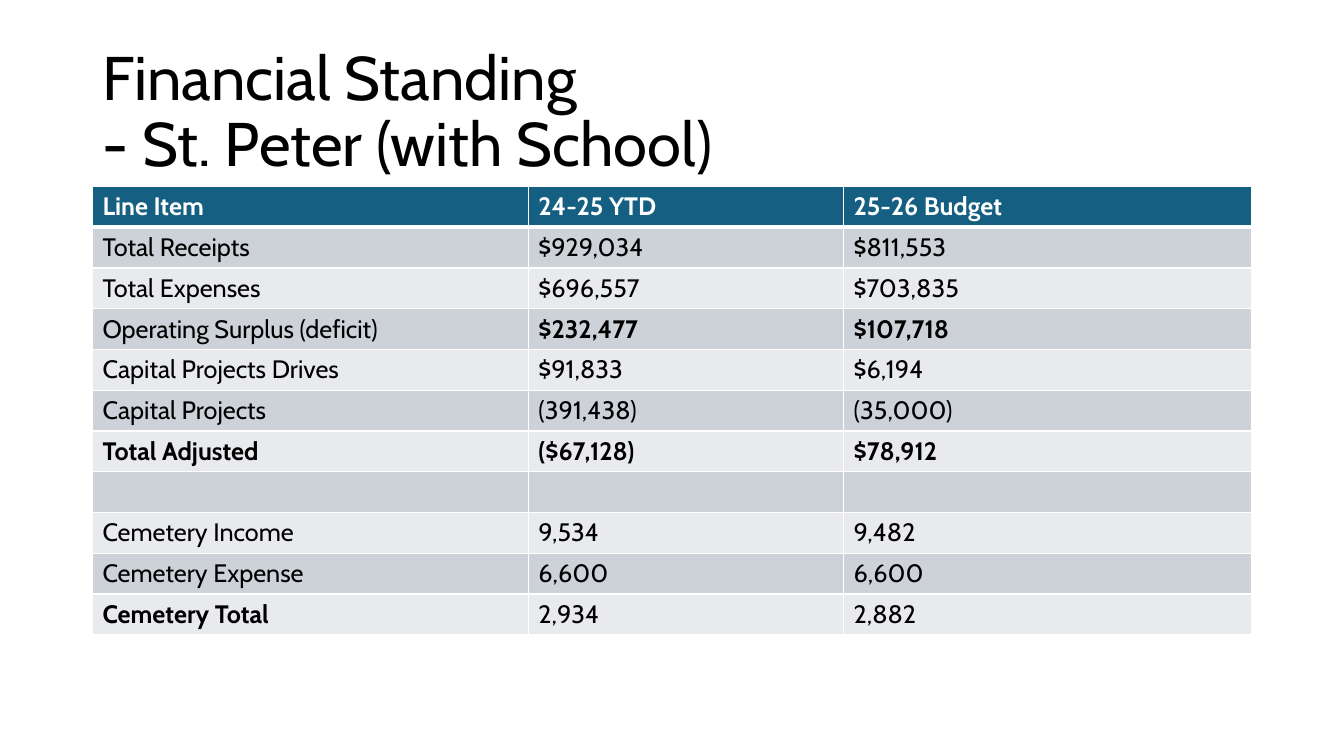
"""Build the financial standing slide for St. Peter."""
from dataclasses import dataclass

from lxml import etree
from pptx import Presentation
from pptx import util as u
from pptx.dml.color import RGBColor
from pptx.enum import text
from pptx.oxml import ns


@dataclass(frozen=True)
class Theme:
    """Colours, font and type sizes of the slide."""
    font: str = "Cabin"
    title_size: int = 44
    table_size: int = 18
    ink: str = "000000"
    paper: str = "FFFFFF"
    header: str = "156082"
    bands: tuple = ("CCD2D8", "E8EAED")
    rule: float = 1
    header_rule: float = 3


THEME = Theme()
WIDTH, HEIGHT = u.Inches(13.333), u.Inches(7.5)
TITLE_AREA = (6.88, 5.33, 86.25, 19.33)
TABLE_AREA = (6.88, 24.67, 86.25, 59.33)
COLUMN_SHARES = (37.6, 27.2, 35.2)
TITLE = "Financial Standing\v- St. Peter (with School)"
LEDGER = (
    ("Line Item", "24-25 YTD", "25-26 Budget"),
    ("Total Receipts", "$929,034", "$811,553"),
    ("Total Expenses", "$696,557", "$703,835"),
    ("Operating Surplus (deficit)", "$232,477", "$107,718"),
    ("Capital Projects Drives", "$91,833", "$6,194"),
    ("Capital Projects", "(391,438)", "(35,000)"),
    ("Total Adjusted", "($67,128)", "$78,912"),
    ("", "", ""),
    ("Cemetery Income", "9,534", "9,482"),
    ("Cemetery Expense", "6,600", "6,600"),
    ("Cemetery Total", "2,934", "2,882"),
)
BOLD_COLUMNS = {
    "Line Item": (0, 1, 2),
    "Operating Surplus (deficit)": (1, 2),
    "Total Adjusted": (0, 1, 2),
    "Cemetery Total": (0,),
}


def place(area):
    """Turn percentages of the slide into left, top, width and height."""
    return [int(share * side / 100)
            for share, side in zip(area, (WIDTH, HEIGHT, WIDTH, HEIGHT))]


def write(frame, words, *, size, color, bold=False, spacing=None):
    """Fill a text frame with one formatted paragraph."""
    para = frame.paragraphs[0]
    para.text = words
    para.line_spacing = spacing
    for span in para.runs:
        span.font.name = THEME.font
        span.font.size = u.Pt(size)
        span.font.bold = bold
        span.font.color.rgb = RGBColor.from_string(color)


def add_title(page, words):
    """Add the slide title."""
    frame = page.shapes.add_textbox(*place(TITLE_AREA)).text_frame
    frame.word_wrap = True
    frame.vertical_anchor = text.MSO_ANCHOR.MIDDLE
    write(frame, words, size=THEME.title_size, color=THEME.ink, spacing=0.9)


def set_borders(cell, widths):
    """Draw the cell borders, given widths by side in points."""
    properties = cell._tc.get_or_add_tcPr()
    for index, side in enumerate("LRTB"):
        line = etree.Element(ns.qn(f"a:ln{side}"), w=str(u.Pt(widths[side])))
        fill = etree.SubElement(line, ns.qn("a:solidFill"))
        etree.SubElement(fill, ns.qn("a:srgbClr"), val=THEME.paper)
        properties.insert(index, line)


def format_cell(cell, words, *, fill, color, bold, widths):
    """Set the fill, borders and text of one cell."""
    cell.fill.solid()
    cell.fill.fore_color.rgb = RGBColor.from_string(fill)
    set_borders(cell, widths)
    write(cell.text_frame, words, size=THEME.table_size, color=color, bold=bold)


def add_ledger(page, rows):
    """Add the banded table with its header row."""
    left, top, width, height = place(TABLE_AREA)
    table = page.shapes.add_table(
        len(rows), len(COLUMN_SHARES), left, top, width, height).table
    for column, share in zip(table.columns, COLUMN_SHARES):
        column.width = int(width * share / 100)
    for row, entries in enumerate(rows):
        header = row == 0
        widths = dict.fromkeys("LRTB", THEME.rule)
        if row < 2:
            widths["B" if header else "T"] = THEME.header_rule
        for column, words in enumerate(entries):
            format_cell(
                table.cell(row, column), words,
                fill=THEME.header if header else THEME.bands[(row - 1) % 2],
                color=THEME.paper if header else THEME.ink,
                bold=column in BOLD_COLUMNS.get(entries[0], ()),
                widths=widths)


def main():
    """Create the deck and save it."""
    deck = Presentation()
    deck.slide_width, deck.slide_height = WIDTH, HEIGHT
    page = deck.slides.add_slide(deck.slide_layouts[6])
    add_title(page, TITLE)
    add_ledger(page, LEDGER)
    deck.save("out.pptx")


if __name__ == "__main__":
    main()
